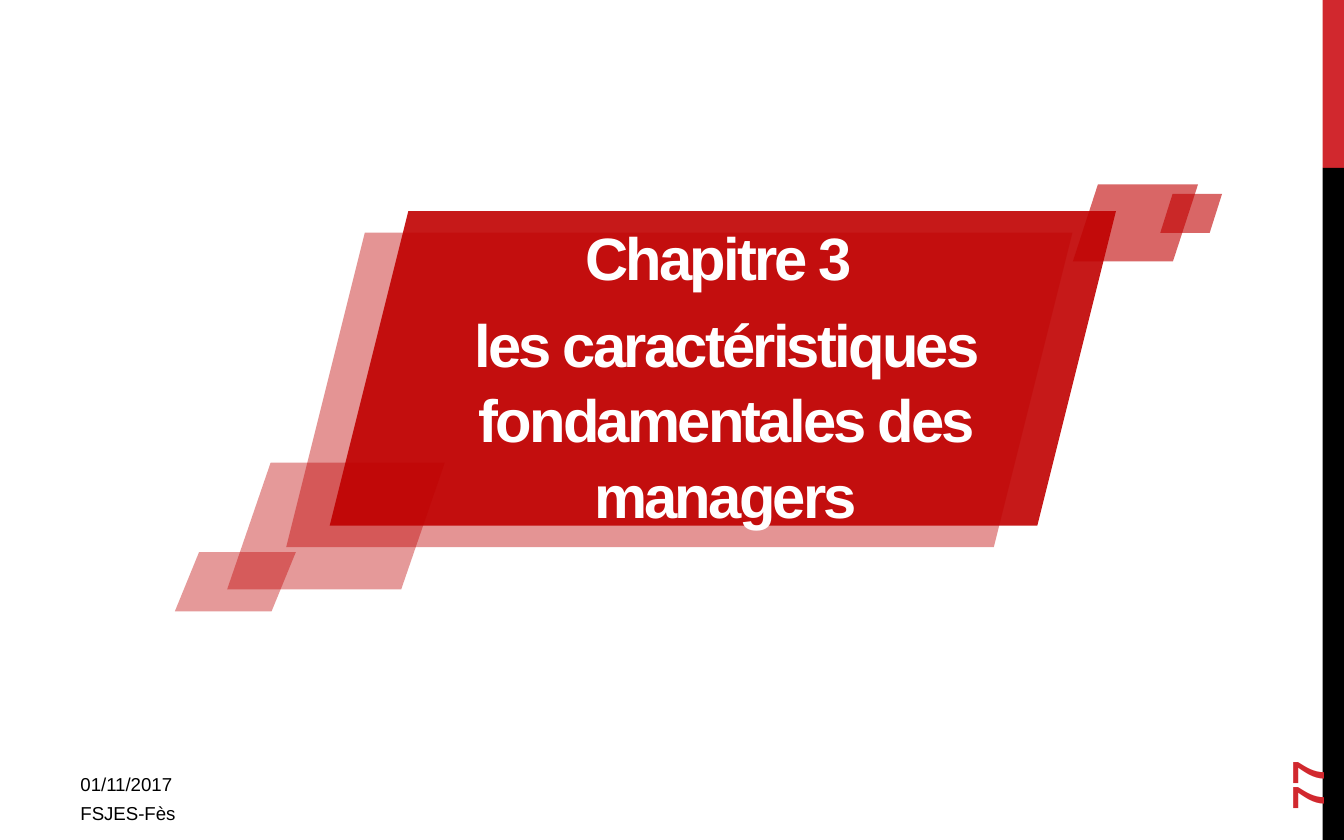
from pptx import Presentation
from pptx.dml.color import RGBColor
from pptx.enum.shapes import MSO_SHAPE
from pptx.enum.text import MSO_ANCHOR, PP_ALIGN
from pptx.oxml.ns import qn
from pptx.util import Pt
from lxml.etree import SubElement

COLORS = {"accent": "D1282E", "banner": "C00000", "ink": "000000", "paper": "FFFFFF"}
PAGE_WIDTH, PAGE_HEIGHT = 720, 450


def add_block(page, kind, box, color, opacity=100):
    """Draw a borderless filled shape in a box of left, top, width, height."""
    shape = page.shapes.add_shape(kind, *map(Pt, box))
    shape.shadow.inherit = False
    shape.line.fill.background()
    shape.fill.solid()
    shape.fill.fore_color.rgb = RGBColor.from_string(COLORS[color])
    if opacity < 100:
        fill_color = shape.fill._xPr.find(qn("a:solidFill"))[0]
        SubElement(fill_color, qn("a:alpha"), val=str(opacity * 1000))
    return shape


def add_text(page, text, box, size=10, color="ink", bold=False, align=PP_ALIGN.LEFT,
             anchor=MSO_ANCHOR.TOP, top=3.6, bottom=3.6, rotation=0,
             tracking=0, line_spacing=1.0, gap=0):
    """Place text in a box, one paragraph for each line of the string."""
    text_box = page.shapes.add_textbox(*map(Pt, box))
    text_box.rotation = rotation
    frame = text_box.text_frame
    frame.word_wrap = True
    frame.vertical_anchor = anchor
    frame.margin_top, frame.margin_bottom = Pt(top), Pt(bottom)
    for index, line in enumerate(text.split("\n")):
        para = frame.add_paragraph() if index else frame.paragraphs[0]
        para.alignment = align
        para.line_spacing = line_spacing
        para.space_before = Pt(gap if index else 0)
        span = para.add_run()
        span.text = line
        span.font.name = "Arial"
        span.font.size = Pt(size)
        span.font.bold = bold
        span.font.color.rgb = RGBColor.from_string(COLORS[color])
        if tracking:
            span._r.get_or_add_rPr().set("spc", str(round(tracking * 100)))
    return text_box


def add_side_bar(page, left, top, width, height):
    """Draw the edge bar, one fifth accent and the rest black."""
    split = height / 5
    add_block(page, MSO_SHAPE.RECTANGLE, (left, top, width, split), "accent")
    add_block(page, MSO_SHAPE.RECTANGLE, (left, top + split, width, height - split), "ink")


def add_footer(page, left, top, width):
    """Write the date, the school and the turned page number."""
    add_text(page, "01/11/2017", (left, top, width, 20.4),
             anchor=MSO_ANCHOR.BOTTOM, bottom=0)
    add_text(page, "FSJES-Fès", (left, top + 20.6, width, 18.7))
    add_text(page, "77", (left + 620.6, top - 21.6, 86.4, 28.8), size=24, color="accent",
             bold=True, anchor=MSO_ANCHOR.MIDDLE, rotation=270)


def add_banner(page, left, top, width, height):
    """Draw the slanted title banner with its shade, corner tiles and title."""
    shade, tile = MSO_SHAPE.PARALLELOGRAM, MSO_SHAPE.FLOWCHART_DATA
    parts = [
        (shade, -23.3, 11.5, width, height, 42),
        (shade, 0, 0, width, height, 90),
        (tile, -54.9, 134.6, 116.6, 67.9, 40),
        (tile, -82.9, 182.6, 64.8, 31.7, 40),
        (tile, 398.2, -14.4, 67, 41.2, 60),
        (tile, 445, -9.4, 33.1, 20.9, 60),
    ]
    for kind, across, down, part_width, part_height, opacity in parts:
        add_block(page, kind, (left + across, top + down, part_width, part_height),
                  "banner", opacity)
    add_text(page, "Chapitre 3 \nles caractéristiques fondamentales des managers",
             (left + 2.2, top - 1.8, width - 1.4, 136), size=32, color="paper", bold=True,
             align=PP_ALIGN.CENTER, top=5, tracking=-1.5, line_spacing=1.05, gap=6.4)


def main():
    """Build the chapter slide and save it."""
    deck = Presentation()
    deck.slide_width, deck.slide_height = Pt(PAGE_WIDTH), Pt(PAGE_HEIGHT)
    page = deck.slides.add_slide(deck.slide_layouts[6])
    add_side_bar(page, 708.6, 0, PAGE_WIDTH - 708.6, PAGE_HEIGHT)
    add_footer(page, 36, 405.4, 270)
    add_banner(page, 176.6, 113.2, 421.2, 168.5)
    deck.save("out.pptx")


if __name__ == "__main__":
    main()
